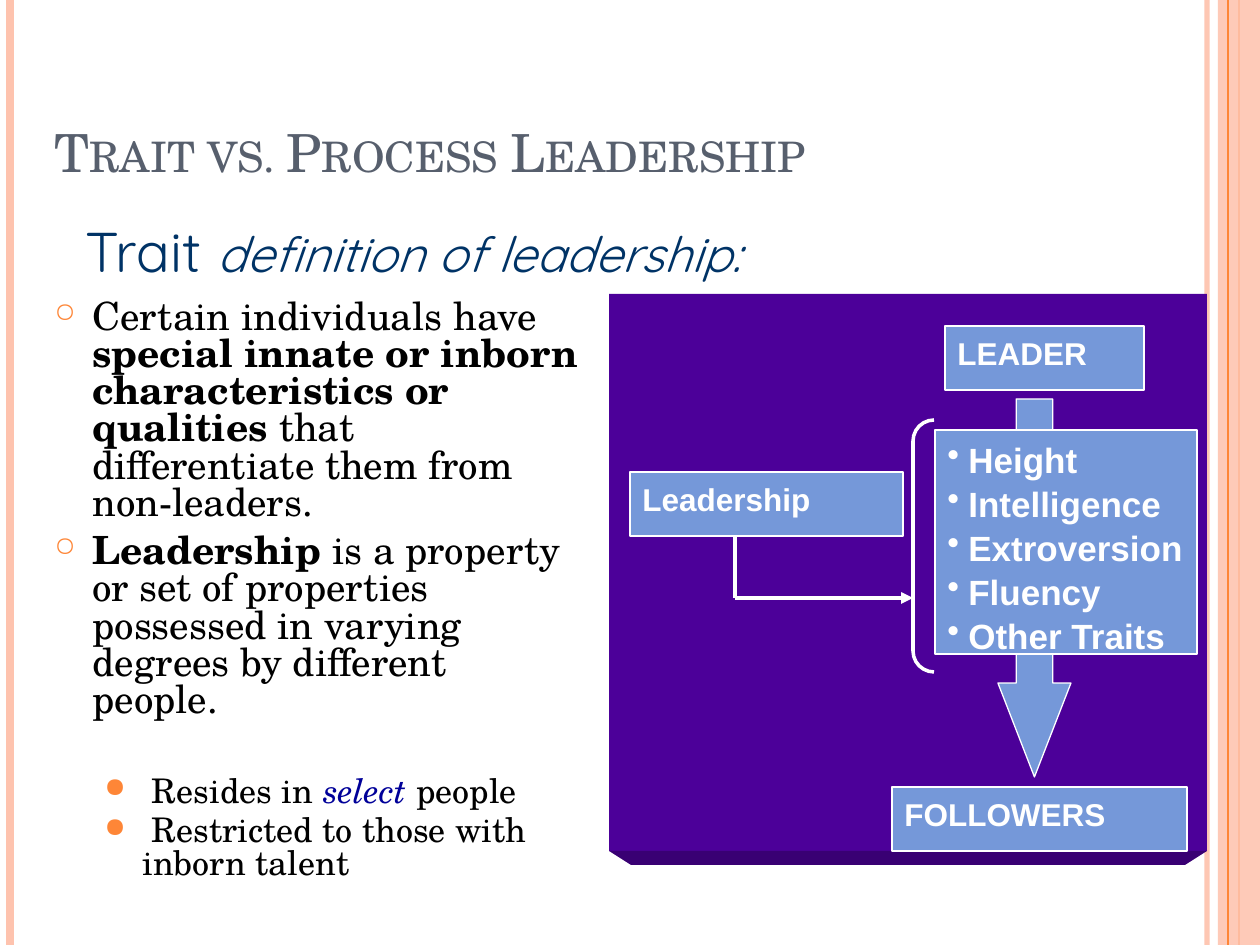
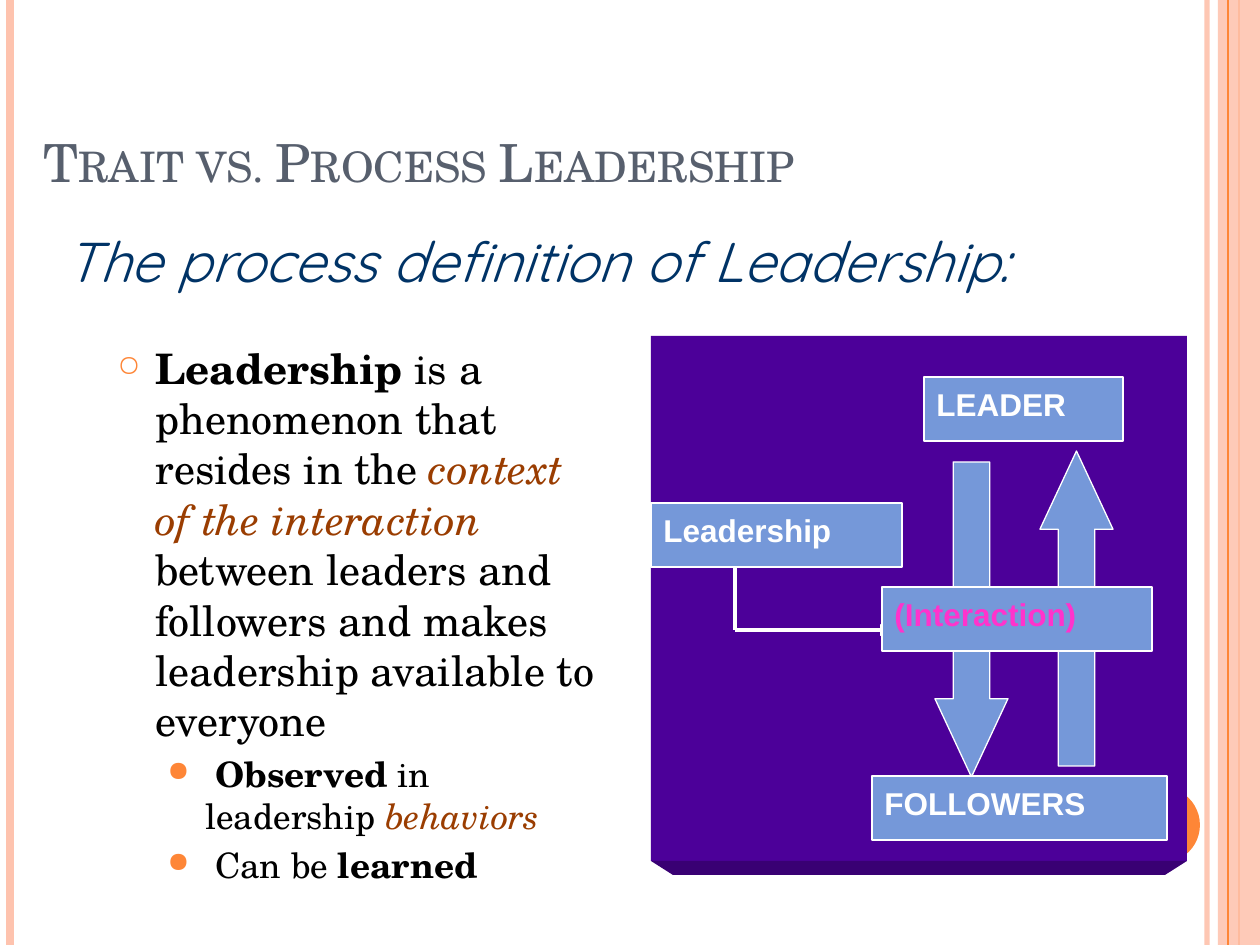
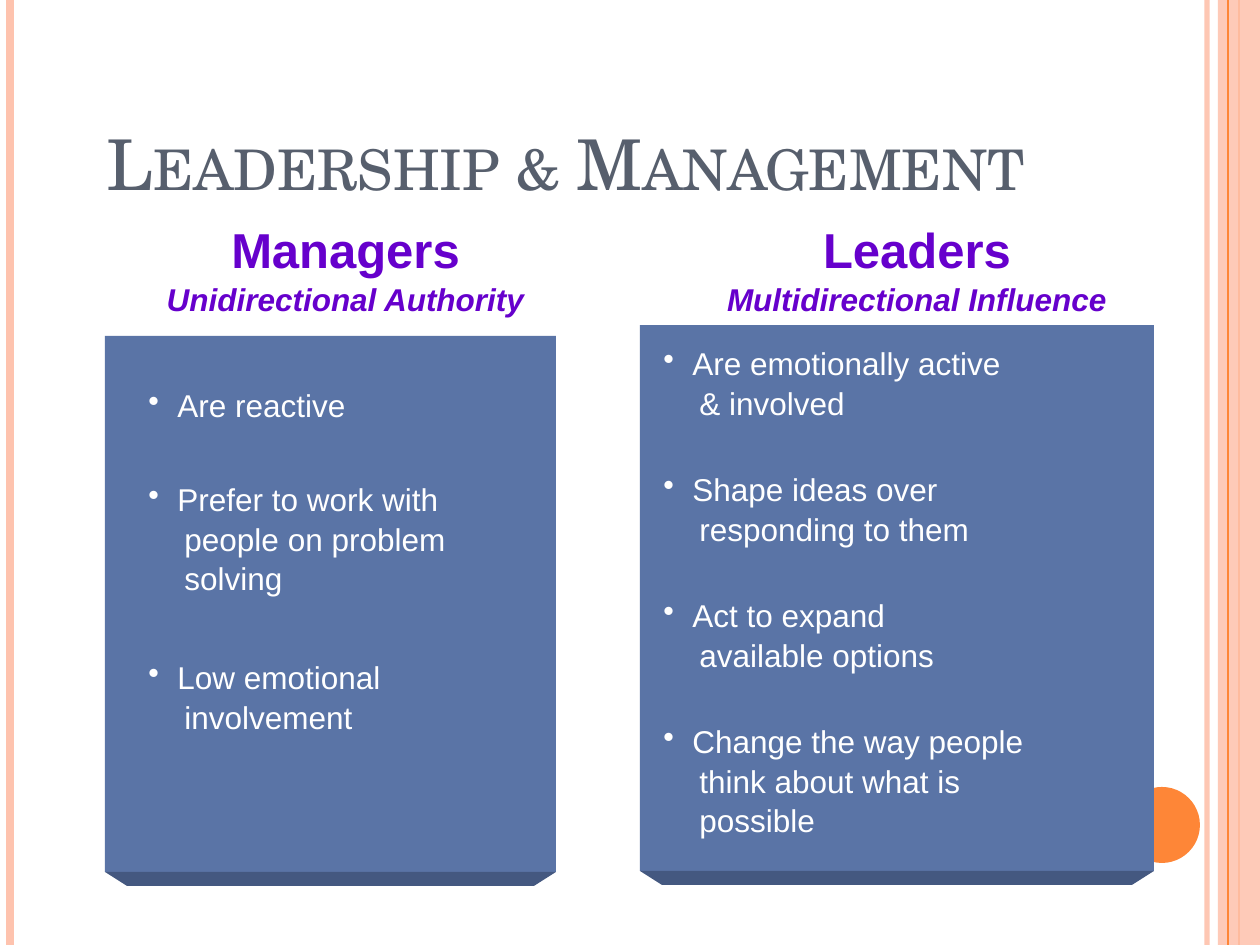
from lxml import etree
from pptx import Presentation
from pptx import util as u
from pptx.dml import color
from pptx.enum import shapes, text
from pptx.oxml import ns

PX = 914400 / 126
SERIF, SANS, ROUND = "TeX Gyre Schola", "Arial", "Quicksand"
WHITE, BLACK, ORANGE, PEACH = "FFFFFF", "000000", "FE8637", "FEC3AE"
SLATE, NAVY, BLUE, BROWN = "575F6D", "003366", "7598D9", "9A3D01"
VIOLET, PINK, INK = "6600CC", "FF33CC", "000099"
PURPLE_PANEL, BLUE_PANEL = ("4C0099", "390073"), ("5A74A6", "445880")
BOX_H, ARROW_W, ARROW_H = 64, 73, 315
TRAIT_TITLE = "Trait vs. Process Leadership"

STRIPES = [(1207, PEACH, 3), (10, PEACH, 4.5), (1239, ORANGE, 1.5), (1228, ORANGE, 0.75)]

TRAIT = {
    "title": (TRAIT_TITLE, 30, (42, 63, 1176, 126)),
    "subtitle": ((73, 210, 736, 81), [("Trait ", 32, ""), ("definition of leadership:", 28, "i")]),
    "body": ((42, 294, 552, 609), 22.2, 19.4, 0.8, [
        (0, 6, [("Certain individuals have ", "", BLACK),
                ("special innate or inborn characteristics or qualities ", "b", BLACK),
                ("that differentiate them from non-leaders.", "", BLACK)]),
        (0, 6, [("Leadership", "b", BLACK),
                (" is a property or set of properties possessed in varying degrees by different people.",
                 "", BLACK)]),
        (1, 32, [(" Resides in ", "", BLACK), ("select ", "i", INK), ("people", "", BLACK)]),
        (1, 4, [(" Restricted to those with inborn talent", "", BLACK)]),
    ]),
    "panel": (609, 294, 598, 557),
    "arrows": [("DOWN_ARROW", 998, 399, 378, 1.286)],
    "elbow": [(735, 535), (735, 598), (913, 598)],
    "bracket": (913, 420, 21, 252),
    "boxes": [("LEADER", 945, 326, 199, WHITE), ("FOLLOWERS", 892, 787, 295, WHITE),
              ("Leadership", 630, 472, 273, WHITE)],
    "traits": ((935, 430, 262, 224),
               ["Height", "Intelligence", "Extroversion", "Fluency", "Other Traits"]),
}

PROCESS = {
    "title": (TRAIT_TITLE, 30, (31, 63, 1176, 136)),
    "subtitle": ((53, 220, 1036, 79), [("The process definition of Leadership:", 32, "i")]),
    "body": ((105, 336, 509, 567), 24, 20, 1, [
        (0, 6, [("Leadership", "b", BLACK),
                (" is a phenomenon that resides in the ", "", BLACK),
                ("context of the interaction ", "i", BROWN),
                ("between leaders and followers and makes leadership available to everyone",
                 "", BLACK)]),
        (1, 4, [(" ", "", BLACK), ("Observed", "b", BLACK), (" in leadership ", "", BLACK),
                ("behaviors", "i", BROWN)]),
        (1, 4, [(" Can be ", "", BLACK), ("learned", "b", BLACK)]),
    ]),
    "panel": (651, 336, 536, 525),
    "arrows": [("DOWN_ARROW", 935, 462, ARROW_H, 1.071), ("UP_ARROW", 1040, 451, ARROW_H, 1.071)],
    "elbow": [(735, 567), (735, 630), (892, 630)],
    "boxes": [("LEADER", 924, 377, 199, WHITE), ("Leadership", 651, 503, 251, WHITE),
              ("(Interaction)", 882, 587, 270, PINK), ("FOLLOWERS", 872, 776, 295, WHITE)],
}

COMPARISON_TITLE = ("Leadership & Management", 40, (94, 53, 1113, 158))
COLUMNS = [
    {"heading": ("Managers", "Unidirectional Authority"), "heading_at": (94, 210, 503, 122),
     "panel": (105, 336, 451, 536), "left": 136, "width": 421,
     "points": [(378, ["Are reactive"]),
                (472, ["Prefer to work with", "people on problem", "solving"]),
                (650, ["Low emotional", "involvement"])]},
    {"heading": ("Leaders", "Multidirectional Influence"), "heading_at": (651, 210, 532, 122),
     "panel": (640, 325, 514, 546), "left": 651, "width": 505,
     "points": [(336 + 126 * row, lines) for row, lines in enumerate([
         ["Are emotionally active", "& involved"],
         ["Shape ideas over", "responding to them"],
         ["Act to expand", "available options"],
         ["Change the way people", "think about what is", "possible"]])]},
]


def emu(*lengths):
    return [round(length * PX) for length in lengths]


def rgb(value):
    return color.RGBColor.from_string(value)


def set_alpha(fill, percent):
    srgb = fill._xPr.find(".//" + ns.qn("a:srgbClr"))
    etree.SubElement(srgb, ns.qn("a:alpha"), val=str(percent * 1000))


def paint(shape, fill=None, outline=None, weight=0.75):
    shape.shadow.inherit = False
    if fill:
        shape.fill.solid()
        shape.fill.fore_color.rgb = rgb(fill)
    else:
        shape.fill.background()
    if outline:
        shape.line.color.rgb = rgb(outline)
        shape.line.width = u.Pt(weight)
    else:
        shape.line.fill.background()
    return shape


def add_preset(slide, preset, at, *style):
    kind = getattr(shapes.MSO_SHAPE, preset)
    return paint(slide.shapes.add_shape(kind, *emu(*at)), *style)


def add_line(slide, start, end, stroke, weight, arrow=False):
    line = slide.shapes.add_connector(shapes.MSO_CONNECTOR.STRAIGHT, *emu(*start, *end))
    line.line.color.rgb = rgb(stroke)
    line.line.width = u.Pt(weight)
    if arrow:
        etree.SubElement(line.line._get_or_add_ln(), ns.qn("a:tailEnd"), type="triangle")
    etree.SubElement(line._element.spPr, ns.qn("a:effectLst"))
    return line


def prepare(frame):
    frame.word_wrap = True
    frame.auto_size = text.MSO_AUTO_SIZE.NONE
    frame.vertical_anchor = text.MSO_ANCHOR.TOP
    return frame


def add_text_box(slide, at):
    return prepare(slide.shapes.add_textbox(*emu(*at)).text_frame)


def add_paragraph(frame, spacing=1.0, before=0, align="LEFT"):
    first = frame.paragraphs[0]
    para = frame.add_paragraph() if first.runs else first
    para.alignment = getattr(text.PP_ALIGN, align)
    para.line_spacing = spacing
    para.space_before = u.Pt(before)
    return para


def add_run(para, words, size, font, ink, flags=""):
    run = para.add_run()
    run.text = words
    run.font.name = font
    run.font.size = u.Pt(size)
    run.font.color.rgb = rgb(ink)
    run.font.bold = "b" in flags
    run.font.italic = "i" in flags
    return run


def indent(para, margin, hanging=0, bullet=None, ink=None, percent=100):
    props = para._p.get_or_add_pPr()
    props.set("marL", str(emu(margin)[0]))
    props.set("indent", str(emu(-hanging)[0]))
    if bullet:
        if ink:
            holder = etree.SubElement(props, ns.qn("a:buClr"))
            etree.SubElement(holder, ns.qn("a:srgbClr"), val=ink)
        etree.SubElement(props, ns.qn("a:buSzPct"), val=str(percent * 1000))
        etree.SubElement(props, ns.qn("a:buChar"), char=bullet)


def add_bands(slide, layout):
    bands = [add_line(slide, (x, 0), (x, 945), stroke, weight) for x, stroke, weight in STRIPES]
    set_alpha(bands[0].line.fill, 93)
    margin = add_preset(slide, "RECTANGLE", (1218, 0, 42, 945), PEACH)
    set_alpha(margin.fill, 87)
    bands.insert(3, margin)
    bands.append(add_preset(slide, "OVAL", (1124, 787, 76, 76), ORANGE))
    for band in bands:
        layout.shapes.element.append(band._element)


def add_title(slide, words, size, at):
    title = slide.shapes.title
    title.left, title.top, title.width, title.height = emu(*at)
    frame = prepare(title.text_frame)
    frame.vertical_anchor = text.MSO_ANCHOR.BOTTOM
    run = add_run(add_paragraph(frame), words, size, SERIF, SLATE)
    run._r.get_or_add_rPr().set("cap", "small")


def add_panel(slide, at, colours):
    left, top, width, height = at
    face, edge = colours
    add_preset(slide, "RECTANGLE", at, face)
    right, bottom, inset, depth = left + width, top + height, 22, 14
    outline = slide.shapes.build_freeform(*emu(left, bottom))
    outline.add_line_segments([emu(right, bottom), emu(right - inset, bottom + depth),
                               emu(left + inset, bottom + depth)])
    paint(outline.convert_to_shape(), edge)


def add_body(slide, at, size, sub_size, spacing, points):
    frame = add_text_box(slide, at)
    for level, before, runs in points:
        para = add_paragraph(frame, spacing, before)
        para.level = level
        margin, bullet, percent = [(38, "○", 70), (88, "●", 80)][level]
        indent(para, margin, 38, bullet, ORANGE, percent)
        for words, flags, ink in runs:
            add_run(para, words, sub_size if level else size, SERIF, ink, flags)


def add_traits(slide, at, traits):
    frame = prepare(add_preset(slide, "RECTANGLE", at, BLUE, WHITE).text_frame)
    for trait in traits:
        para = add_paragraph(frame, 1.05)
        indent(para, 21, 21, "•")
        add_run(para, trait, 20, SANS, WHITE, "b")


def add_definition(slide, content):
    add_title(slide, *content["title"])
    add_body(slide, *content["body"])
    at, runs = content["subtitle"]
    subtitle = add_paragraph(add_text_box(slide, at))
    for words, size, flags in runs:
        add_run(subtitle, words, size, ROUND, NAVY, flags)
    add_panel(slide, content["panel"], PURPLE_PANEL)
    for preset, x, y, height, head in content["arrows"]:
        arrow = add_preset(slide, preset, (x, y, ARROW_W, height), BLUE, WHITE)
        arrow.adjustments[0] = 0.5
        arrow.adjustments[1] = head
    start, corner, end = content["elbow"]
    add_line(slide, start, corner, WHITE, 2.25)
    add_line(slide, corner, end, WHITE, 2.25, arrow=True)
    if "bracket" in content:
        bracket = add_preset(slide, "LEFT_BRACKET", content["bracket"], None, WHITE, 2)
        bracket.adjustments[0] = 1
    for words, x, y, width, ink in content["boxes"]:
        box = add_preset(slide, "RECTANGLE", (x, y, width, BOX_H), BLUE, WHITE)
        add_run(add_paragraph(prepare(box.text_frame), 1.05), words, 18, SANS, ink, "b")
    if "traits" in content:
        add_traits(slide, *content["traits"])


def add_column(slide, column):
    heading = add_text_box(slide, column["heading_at"])
    for words, size, flags in zip(column["heading"], (28, 18), ("b", "bi")):
        add_run(add_paragraph(heading, 1.05, align="CENTER"), words, size, SANS, VIOLET, flags)
    add_panel(slide, column["panel"], BLUE_PANEL)
    for top, lines in column["points"]:
        frame = add_text_box(slide, (column["left"], top, column["width"], 12 + 38 * len(lines)))
        for row, words in enumerate(lines):
            para = add_paragraph(frame, 1.05)
            if row:
                indent(para, 36)
            else:
                indent(para, 29, 29, "•")
            add_run(para, words, 18, SANS, WHITE)


def main():
    deck = Presentation()
    deck.slide_width, deck.slide_height = emu(1260, 945)
    layout = deck.slide_layouts[5]
    trait, process, comparison = [deck.slides.add_slide(layout) for _ in range(3)]
    add_bands(trait, layout)
    add_definition(trait, TRAIT)
    add_definition(process, PROCESS)
    add_title(comparison, *COMPARISON_TITLE)
    for column in COLUMNS:
        add_column(comparison, column)
    deck.save("out.pptx")


if __name__ == "__main__":
    main()
